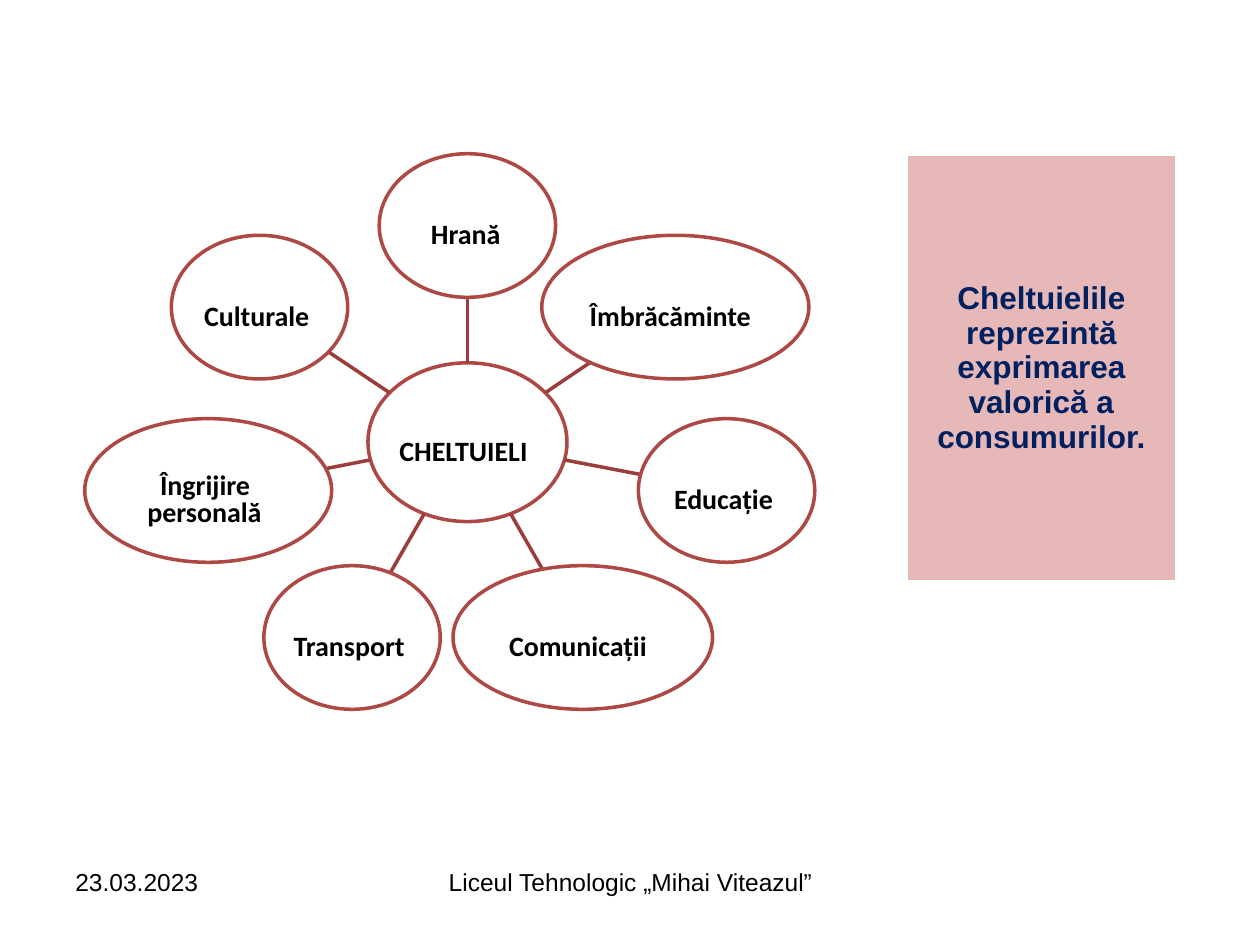
from dataclasses import dataclass
from math import cos, hypot, pi, sin

from lxml.etree import SubElement
from pptx import Presentation
from pptx.dml.color import RGBColor
from pptx.enum.shapes import MSO_CONNECTOR, MSO_SHAPE
from pptx.enum.text import MSO_ANCHOR, PP_ALIGN
from pptx.oxml.ns import qn
from pptx.util import Inches, Pt


@dataclass(frozen=True)
class Theme:
    ring: str = "AE4845"
    spoke: str = "993E3C"
    paper: str = "FFFFFF"
    ink: str = "000000"
    navy: str = "002060"
    pink: str = "E6B9B8"
    head: str = "Arial"
    body: str = "Calibri"
    label: int = 16
    note: int = 18
    foot: int = 14
    line: float = 2


def edge(mid, half, goal):
    """Point where the ray from an oval's centre to goal leaves the oval."""
    dx, dy = goal[0] - mid[0], goal[1] - mid[1]
    size = hypot(dx / half[0], dy / half[1])
    return mid[0] + dx / size, mid[1] + dy / size


class Board:
    def __init__(self, slide, theme):
        self.slide, self.theme = slide, theme

    def add_text(self, para, text, size, font, color, bold=False):
        run = para.add_run()
        run.text = text
        run.font.size = Pt(size)
        run.font.name = font
        run.font.bold = bold
        run.font.color.rgb = RGBColor.from_string(color)

    def oval(self, mid, half):
        box = [mid[0] - half[0], mid[1] - half[1], 2 * half[0], 2 * half[1]]
        shape = self.slide.shapes.add_shape(MSO_SHAPE.OVAL, *map(Inches, box))
        shape.shadow.inherit = False
        shape.fill.solid()
        shape.fill.fore_color.rgb = RGBColor.from_string(self.theme.paper)
        shape.line.color.rgb = RGBColor.from_string(self.theme.ring)
        shape.line.width = Pt(self.theme.line)

    def spoke(self, start, end):
        line = self.slide.shapes.add_connector(
            MSO_CONNECTOR.STRAIGHT, *map(Inches, start + end))
        line.line.color.rgb = RGBColor.from_string(self.theme.spoke)
        line.line.width = Pt(self.theme.line)
        SubElement(line._element.spPr, qn("a:effectLst"))

    def label(self, text, left, top, width):
        box = self.slide.shapes.add_textbox(
            *map(Inches, (left, top, width, 0.26)))
        frame = box.text_frame
        frame.word_wrap = True
        frame.margin_left = frame.margin_right = 0
        frame.margin_top = frame.margin_bottom = 0
        para = frame.paragraphs[0]
        para.line_spacing = 1.07
        para.space_after = Pt(8)
        look = self.theme
        self.add_text(para, text, look.label, look.body, look.ink, True)

    def note(self, text, left, top, width, height):
        """One-cell table with white borders."""
        look = self.theme
        table = self.slide.shapes.add_table(
            1, 1, *map(Inches, (left, top, width, height))).table
        cell = table.cell(0, 0)
        cell.vertical_anchor = MSO_ANCHOR.MIDDLE
        cell.margin_left = cell.margin_right = Inches(0.08)
        cell.margin_top = cell.margin_bottom = 0
        props = cell._tc.get_or_add_tcPr()
        for side, size in (("L", 1), ("R", 1), ("T", 1), ("B", 3)):
            line = SubElement(props, qn("a:ln" + side), w=str(int(Pt(size))))
            fill = SubElement(line, qn("a:solidFill"))
            SubElement(fill, qn("a:srgbClr"), val=look.paper)
        cell.fill.solid()
        cell.fill.fore_color.rgb = RGBColor.from_string(look.pink)
        para = cell.text_frame.paragraphs[0]
        para.alignment = PP_ALIGN.CENTER
        para.line_spacing = 0.98
        para.space_after = Pt(8)
        self.add_text(para, text, look.note, look.head, look.navy, True)

    def foot(self, text, left, width, align):
        box = self.slide.shapes.add_textbox(
            *map(Inches, (left, 6.83, width, 0.52)))
        box.text_frame.word_wrap = True
        para = box.text_frame.paragraphs[0]
        para.alignment = align
        look = self.theme
        self.add_text(para, text, look.foot, look.head, look.ink)


HUB, CORE = (3.71, 3.51), (0.79, 0.63)
ORBIT = (2.11, 1.72)
TALL, RISE = 0.57, 0.09

# Half width of the oval, then each text line: text, left, shift, width
NODES = [
    (0.7, [("Hrană", 3.42, 0, 0.78)]),
    (1.06, [("Îmbrăcăminte", 4.68, 0, 1.82)]),
    (0.7, [("Educație", 5.35, 0, 1.12)]),
    (1.03, [("Comunicații", 4.04, 0, 1.31)]),
    (0.7, [("Transport", 2.33, 0, 1.33)]),
    (0.98, [("Îngrijire", 1.27, -0.11, 1.09),
            ("personală", 1.17, 0.1, 1.29)]),
    (0.7, [("Culturale", 1.62, 0, 1.26)]),
]


def main():
    deck = Presentation()
    deck.slide_width, deck.slide_height = Inches(10), Inches(7.5)
    board = Board(deck.slides.add_slide(deck.slide_layouts[6]), Theme())

    board.oval(HUB, CORE)
    board.label("CHELTUIELI", 3.17, HUB[1] - RISE, 1.51)
    for step, (wide, lines) in enumerate(NODES):
        turn = 2 * pi * step / len(NODES)
        ray = sin(turn), -cos(turn)
        mid = HUB[0] + ORBIT[0] * ray[0], HUB[1] + ORBIT[1] * ray[1]
        start = HUB[0] + CORE[0] * ray[0], HUB[1] + CORE[1] * ray[1]
        board.spoke(start, edge(mid, (wide, TALL), HUB))
        board.oval(mid, (wide, TALL))
        for text, left, shift, width in lines:
            board.label(text, left, mid[1] - RISE + shift, width)

    board.note("Cheltuielile reprezintă exprimarea valorică a consumurilor.",
               7.2, 1.23, 2.13, 3.39)
    board.foot("23.03.2023", 0.5, 2.33, PP_ALIGN.LEFT)
    board.foot("Liceul Tehnologic „Mihai Viteazul”", 3.42, 3.17,
               PP_ALIGN.CENTER)
    deck.save("out.pptx")


if __name__ == "__main__":
    main()
